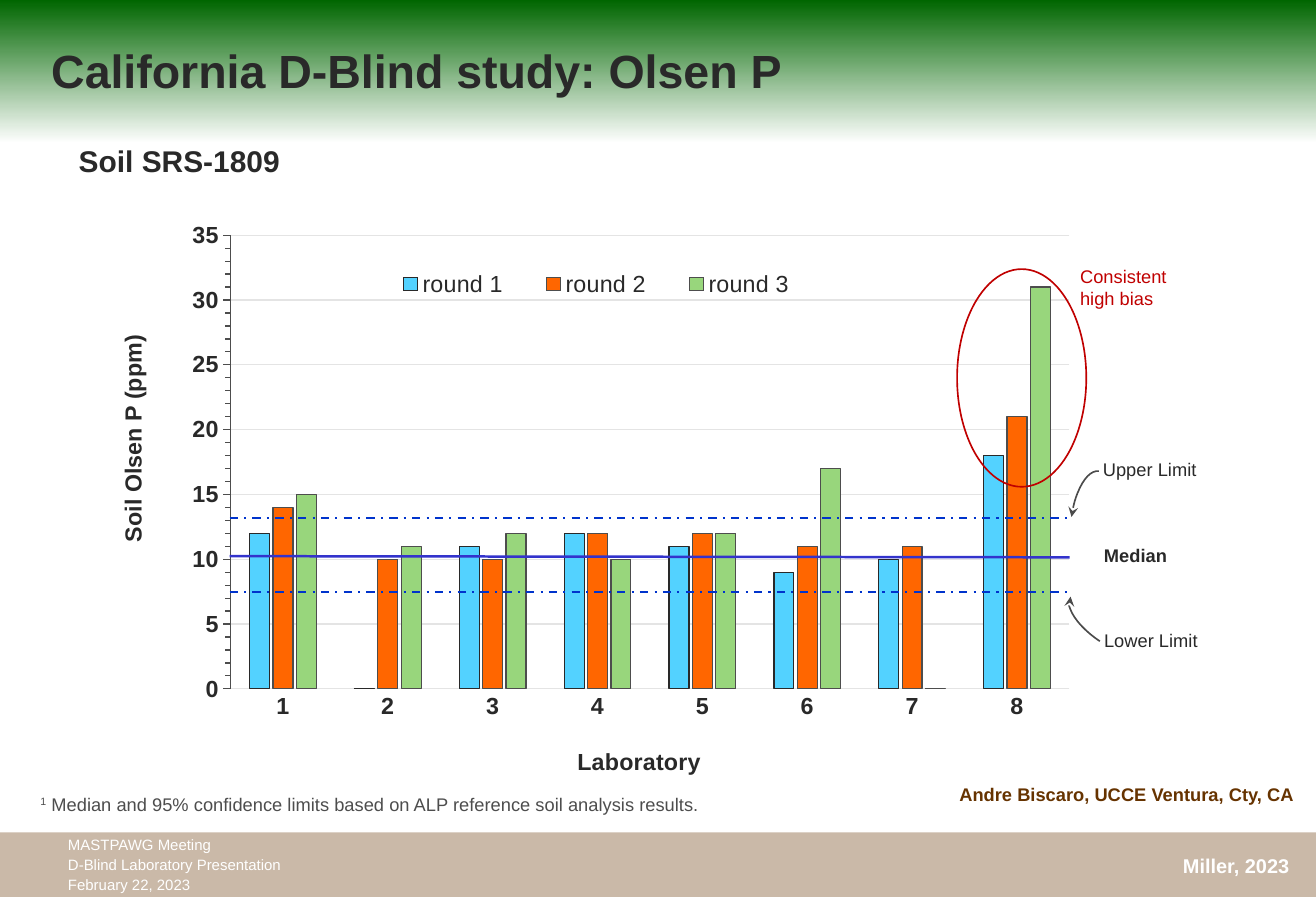
"""Build the Olsen P slide of the California D-Blind study."""
from dataclasses import dataclass

from lxml import etree
from pptx import Presentation
from pptx.chart.data import CategoryChartData
from pptx.dml.color import RGBColor
from pptx.enum.chart import XL_CHART_TYPE as ChartType, XL_LEGEND_POSITION as LegendPosition
from pptx.enum.chart import XL_TICK_MARK as TickMark
from pptx.enum.dml import MSO_LINE as Dash
from pptx.enum.shapes import MSO_CONNECTOR as Connector, MSO_SHAPE as Shape
from pptx.enum.text import MSO_ANCHOR as Anchor, MSO_AUTO_SIZE as AutoSize
from pptx.oxml import parse_xml
from pptx.oxml.ns import nsdecls, qn
from pptx.util import Inches, Pt


@dataclass(frozen=True)
class Theme:
    font: str = "Arial"
    ink: str = "292929"
    grey: str = "4D4D4D"
    arrow: str = "4B4B4B"
    grid: str = "E4E4E4"
    green: str = "006600"
    white: str = "FFFFFF"
    brown: str = "663300"
    red: str = "C00000"
    median: str = "3333CC"
    limit: str = "0033CC"
    rounds: tuple = ("53D2FF", "FF6600", "98D67C")
    title: int = 28
    subtitle: int = 18
    chart: int = 14
    credit: int = 12
    note: int = 11
    footer: int = 9


theme = Theme()
rgb = RGBColor.from_string


def style(font, size, color, bold=False):
    font.name, font.size, font.bold = theme.font, Pt(size), bold
    font.color.rgb = rgb(color)


def place(element, **position):
    modes = "".join(f'<c:{axis}Mode val="edge"/>' for axis in "xy")
    values = "".join(f'<c:{key} val="{value}"/>' for key, value in position.items())
    target = '<c:layoutTarget val="inner"/>' if element.tag == qn("c:plotArea") else ""
    for old in element.findall(qn("c:layout")):
        element.remove(old)
    layout = parse_xml(f'<c:layout {nsdecls("c")}><c:manualLayout>{target}{modes}{values}'
                       '</c:manualLayout></c:layout>')
    before = [child for child in element if child.tag in (qn("c:tx"), qn("c:legendPos"))]
    element.insert(len(before), layout)


prs = Presentation()
prs.slide_width, prs.slide_height = Inches(11), Inches(7.5)
slide = prs.slides.add_slide(prs.slide_layouts[6])
shapes = slide.shapes

sky = slide.background.fill
sky.gradient()
sky.gradient_angle = 270
for stop, color, position in zip(sky.gradient_stops, (theme.green, theme.white), (0, 0.16)):
    stop.color.rgb = rgb(color)
    stop.position = position

olsen = CategoryChartData(number_format="0")
olsen.categories = [str(lab) for lab in range(1, 9)]
olsen.add_series("round 1", (12, 0, 11, 12, 11, 9, 10, 18))
olsen.add_series("round 2", (14, 10, 10, 12, 12, 11, 11, 21))
olsen.add_series("round 3", (15, 11, 12, 10, 12, 17, 0, 31))
chart = shapes.add_chart(ChartType.COLUMN_CLUSTERED, Inches(1.28), Inches(1.8),
                         Inches(7.8), Inches(4.79), olsen).chart
style(chart.font, theme.chart, theme.grey)
chart.has_title = False
place(chart.plots[0]._element.getparent(), x=0.083, y=0.035, w=0.899, h=0.792)

columns = chart.plots[0]
columns.gap_width, columns.overlap, columns.vary_by_categories = 192, -17, False
outlines = (theme.ink, theme.grey, theme.grey)
for series, color, outline in zip(columns.series, theme.rounds, outlines):
    series.invert_if_negative = False
    series.format.fill.solid()
    series.format.fill.fore_color.rgb = rgb(color)
    series.format.line.color.rgb = rgb(outline)
    series.format.line.width = Pt(0.75)

labs, ppm = chart.category_axis, chart.value_axis
for axis, color in ((labs, theme.grid), (ppm, theme.grey)):
    style(axis.tick_labels.font, theme.chart, theme.ink, True)
    axis.format.line.color.rgb = rgb(color)
    axis.format.line.width = Pt(0.75)
labs.major_tick_mark = labs.minor_tick_mark = TickMark.NONE
labs.axis_title.text_frame.text = "Laboratory"
style(labs.axis_title.text_frame.paragraphs[0].font, theme.chart, theme.ink, True)
place(labs.axis_title._element, x=0.45, y=0.92)
ppm.major_tick_mark = ppm.minor_tick_mark = TickMark.OUTSIDE
ppm.minimum_scale, ppm.maximum_scale = 0, 35
ppm.major_unit, ppm.minor_unit = 5, 1
ppm.tick_labels.number_format, ppm.tick_labels.number_format_is_linked = "0", False
ppm.major_gridlines.format.line.color.rgb = rgb(theme.grid)
ppm.major_gridlines.format.line.width = Pt(0.75)

chart.has_legend = True
chart.legend.position = LegendPosition.BOTTOM
chart.legend.include_in_layout = False
style(chart.legend.font, theme.chart, theme.ink)
place(chart.legend._element, x=0.23, y=0.08, w=0.49, h=0.08)

for start, end, color, width, dash in (
    (4.65, 4.66, theme.median, 1.5, Dash.SOLID),
    (4.95, 4.95, theme.limit, 1.25, Dash.DASH_DOT),
    (4.33, 4.33, theme.limit, 1.25, Dash.DASH_DOT),
):
    level = shapes.add_connector(Connector.STRAIGHT, Inches(1.92), Inches(start),
                                 Inches(8.94), Inches(end))
    level.line.color.rgb = rgb(color)
    level.line.width, level.line.dash_style = Pt(width), dash
    etree.SubElement(level._element.spPr, qn("a:effectLst"))

for kind, left, top, width, height, turn, color, arrow in (
    (Shape.ARC, 8.72, 4.17, 0.82, 0.35, 277.7, theme.arrow, "a:headEnd"),
    (Shape.ARC, 8.88, 5.04, 0.82, 0.35, 213.6, theme.arrow, "a:tailEnd"),
    (Shape.OVAL, 8, 2.25, 1.08, 1.82, 0, theme.red, None),
):
    marker = shapes.add_shape(kind, Inches(left), Inches(top), Inches(width), Inches(height))
    marker.rotation = turn
    marker.shadow.inherit = False
    marker.fill.background()
    marker.line.color.rgb = rgb(color)
    marker.line.width = Pt(1)
    if arrow:
        etree.SubElement(marker.line._get_or_add_ln(), qn(arrow), type="stealth")

band = shapes.add_shape(Shape.RECTANGLE, 0, Inches(6.96), Inches(11), Inches(0.54))
band.shadow.inherit = False
band.line.fill.background()
band.fill.solid()
band.fill.fore_color.rgb = rgb(theme.brown)
etree.SubElement(band._element.spPr.find(".//" + qn("a:srgbClr")), qn("a:alpha"), val="34000")

frames = []
for text, left, top, width, height, size, color, bold, wrap, spacing in (
    ("California D-Blind study: Olsen P", 0.33, 0.05, 8.16, 1.07,
     theme.title, theme.ink, True, True, None),
    ("Soil Olsen P (ppm)", 0.14, 3.49, 1.94, 0.34, theme.chart, theme.ink, True, False, None),
    ("Median", 9.13, 4.5, 0.73, 0.29, theme.note, theme.ink, True, False, None),
    ("Upper Limit", 9.12, 3.78, 0.99, 0.29, theme.note, theme.ink, False, False, None),
    ("Lower Limit", 9.13, 5.21, 0.99, 0.29, theme.note, theme.ink, False, False, None),
    ("Soil SRS-1809", 0.56, 1.14, 1.9, 0.4, theme.subtitle, theme.ink, True, False, None),
    ("Miller, 2023", 9.79, 7.09, 1.1, 0.3, theme.credit, theme.white, True, False, None),
    ("MASTPAWG Meeting\nD-Blind Laboratory Presentation\nFebruary 22, 2023",
     0.47, 6.92, 2.07, 0.61, theme.footer, theme.white, False, False, Pt(12)),
    ("Andre Biscaro, UCCE Ventura, Cty, CA", 7.92, 6.35, 3.08, 0.39,
     theme.note, theme.brown, True, True, Pt(24)),
    ("Consistent\nhigh bias", 8.93, 2.17, 0.97, 0.47, theme.note, theme.red, False, False, None),
    ("1", 0.24, 6.58, 5.77, 0.29, theme.note, theme.grey, False, True, None),
):
    label = shapes.add_textbox(Inches(left), Inches(top), Inches(width), Inches(height))
    frame = label.text_frame
    frame.text, frame.word_wrap = text, wrap
    frame.auto_size = AutoSize.SHAPE_TO_FIT_TEXT
    for paragraph in frame.paragraphs:
        paragraph.line_spacing = spacing
        style(paragraph.font, size, color, bold)
    frames.append((label, frame))

heading = frames[0][1]
heading.auto_size, heading.vertical_anchor = AutoSize.NONE, Anchor.MIDDLE
frames[1][0].rotation = 270
footnote = frames[-1][1].paragraphs[0]
footnote.runs[0].font._element.set("baseline", "30000")
footnote.add_run().text = " Median and 95% confidence limits based on ALP reference soil analysis results."

prs.save("out.pptx")
